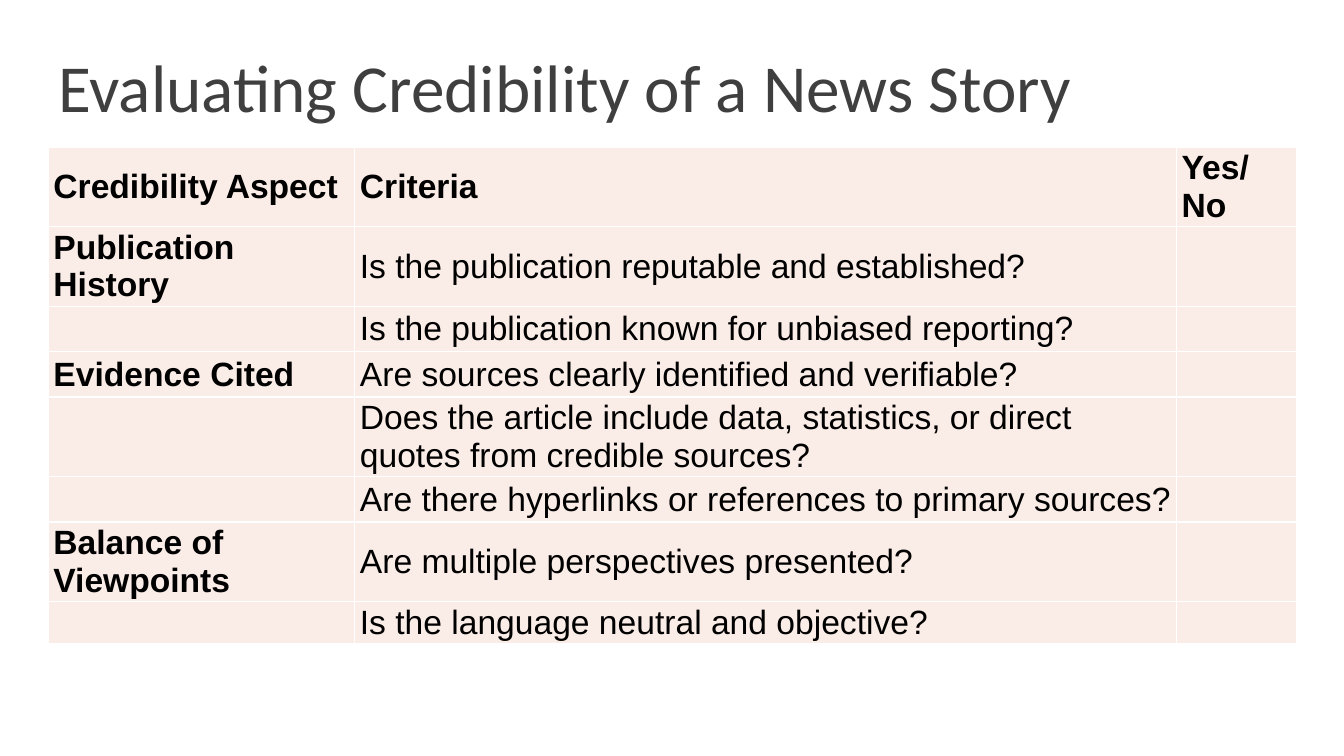
from dataclasses import dataclass

from lxml.etree import SubElement
from pptx import Presentation
from pptx.dml.color import RGBColor as Rgb
from pptx.enum.text import MSO_ANCHOR as Anchor
from pptx.oxml.ns import qn
from pptx.slide import Slide
from pptx.table import _Cell as Cell
from pptx.text.text import TextFrame
from pptx.util import Inches, Pt


@dataclass(frozen=True)
class Theme:
    title_font: str = "Calibri"
    table_font: str = "Arial"
    title_size: int = 48
    table_size: int = 24
    title_color: str = "3F3F3F"
    text_color: str = "000000"
    cell_fill: str = "FAECE6"
    border_color: str = "FFFFFF"


@dataclass(frozen=True)
class ChecklistRow:
    aspect: str
    criterion: str
    height: float
    answer: str = ""
    header: bool = False


THEME = Theme()
TALL, SHORT, LAST = 0.79, 0.45, 0.42
COLUMN_WIDTHS = (3.04, 8.15, 1.19)
CHECKLIST = (
    ChecklistRow("Credibility Aspect", "Criteria", TALL, "Yes/No", header=True),
    ChecklistRow("Publication History", "Is the publication reputable and established?", TALL),
    ChecklistRow("", "Is the publication known for unbiased reporting?", SHORT),
    ChecklistRow("Evidence Cited", "Are sources clearly identified and verifiable?", SHORT),
    ChecklistRow("", "Does the article include data, statistics, or direct quotes from credible sources?", TALL),
    ChecklistRow("", "Are there hyperlinks or references to primary sources?", SHORT),
    ChecklistRow("Balance of Viewpoints", "Are multiple perspectives presented?", TALL),
    ChecklistRow("", "Is the language neutral and objective?", LAST),
)


def add_run(frame: TextFrame, text: str, font: str, size: int, color: str, bold: bool = False) -> None:
    run = frame.paragraphs[0].add_run()
    run.text = text
    run.font.name = font
    run.font.size = Pt(size)
    run.font.bold = bold
    run.font.color.rgb = Rgb.from_string(color)


def add_borders(cell: Cell) -> None:
    properties = cell._tc.get_or_add_tcPr()
    for position, side in enumerate(("a:lnL", "a:lnR", "a:lnT", "a:lnB")):
        border = SubElement(properties, qn(side), w=str(Pt(1)))
        fill = SubElement(border, qn("a:solidFill"))
        SubElement(fill, qn("a:srgbClr"), val=THEME.border_color)
        # Borders come before the fill in the cell properties
        properties.insert(position, border)


def fill_cell(cell: Cell, text: str, bold: bool) -> None:
    cell.fill.solid()
    cell.fill.fore_color.rgb = Rgb.from_string(THEME.cell_fill)
    cell.vertical_anchor = Anchor.MIDDLE
    cell.margin_left = Inches(0.05)
    cell.margin_right = Inches(0.04)
    cell.margin_top = cell.margin_bottom = Inches(0.02)
    add_borders(cell)
    if text:
        add_run(cell.text_frame, text, THEME.table_font, THEME.table_size, THEME.text_color, bold)


def add_title(slide: Slide, text: str) -> None:
    frame = slide.shapes.add_textbox(Inches(0.48), Inches(0.45), Inches(11), Inches(0.85)).text_frame
    frame.word_wrap = True
    frame.vertical_anchor = Anchor.BOTTOM
    frame.paragraphs[0].line_spacing = 0.85
    add_run(frame, text, THEME.title_font, THEME.title_size, THEME.title_color)


def add_checklist(slide: Slide) -> None:
    checklist = slide.shapes.add_table(
        len(CHECKLIST), len(COLUMN_WIDTHS), Inches(0.48), Inches(1.46),
        Inches(sum(COLUMN_WIDTHS)), Inches(sum(entry.height for entry in CHECKLIST)),
    ).table
    checklist.horz_banding = False
    for column, width in zip(checklist.columns, COLUMN_WIDTHS):
        column.width = Inches(width)
    for row, entry in zip(checklist.rows, CHECKLIST):
        row.height = Inches(entry.height)
        aspect, criterion, answer = row.cells
        fill_cell(aspect, entry.aspect, bold=True)
        fill_cell(criterion, entry.criterion, bold=entry.header)
        fill_cell(answer, entry.answer, bold=entry.header)


def main() -> None:
    deck = Presentation()
    deck.slide_width, deck.slide_height = Inches(13.33), Inches(7.5)
    slide = deck.slides.add_slide(deck.slide_layouts[6])
    # Credibility checklist, then its heading
    add_checklist(slide)
    add_title(slide, "Evaluating Credibility of a News Story")
    deck.save("out.pptx")


if __name__ == "__main__":
    main()
